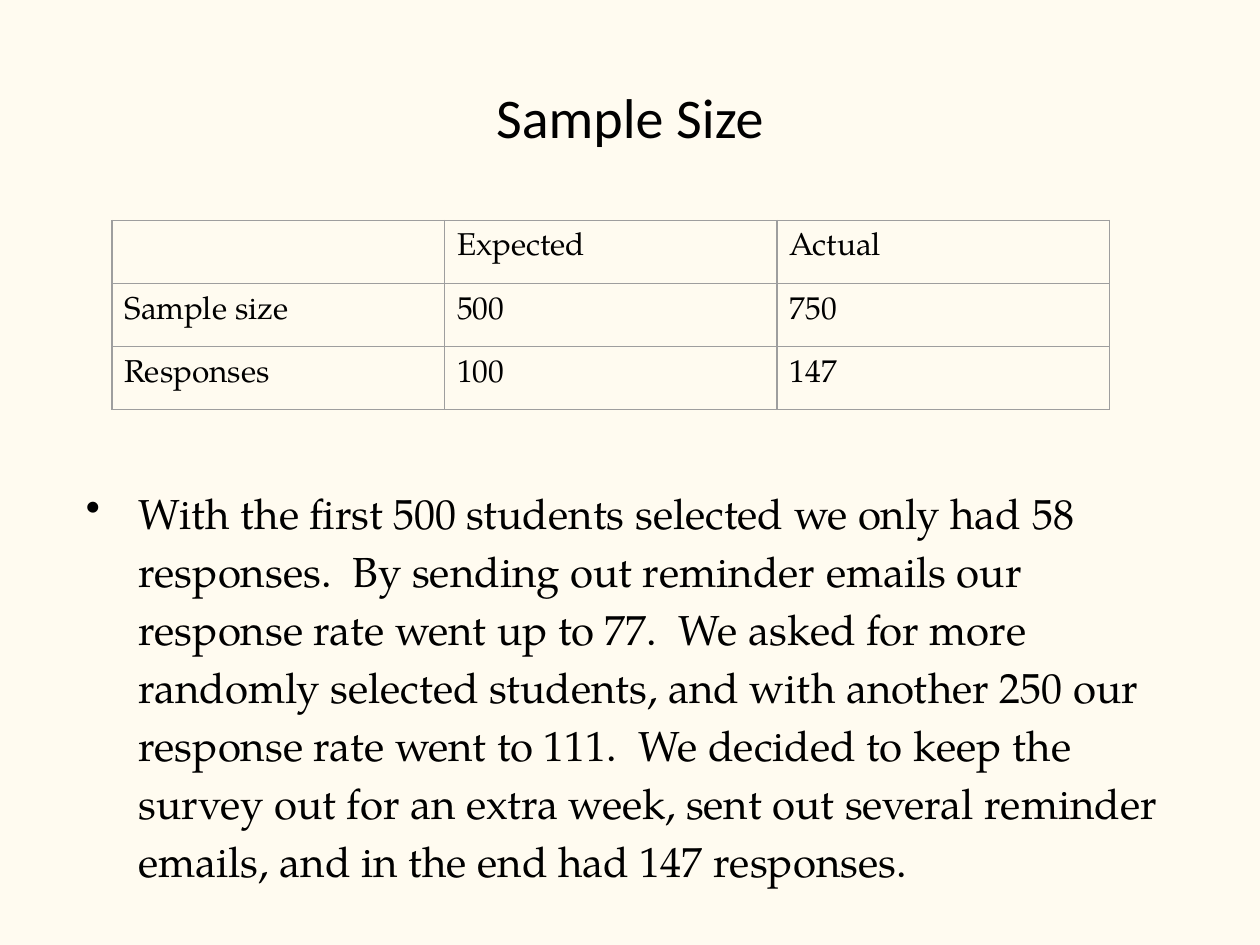
from lxml.etree import SubElement
from pptx import Presentation
from pptx.dml.color import RGBColor
from pptx.enum.text import MSO_ANCHOR as Anchor, PP_ALIGN as Align
from pptx.oxml.ns import qn
from pptx.util import Pt

CREAM = RGBColor(0xFF, 0xFB, 0xF0)
BLACK = RGBColor(0, 0, 0)
GRAY = RGBColor(0x9E, 0x9E, 0x9E)
HEADING_FONT = "Calibri"
BODY_FONT = "TeX Gyre Pagella"
INSET = Pt(7.2)
MARGINS = dict.fromkeys(
    ("margin_left", "margin_right", "margin_top", "margin_bottom"), INSET)

SAMPLE_ROWS = [
    ["", "Expected", "Actual"],
    ["Sample size", "500", "750"],
    ["Responses", "100", "147"],
]
SUMMARY = (
    "With the first 500 students selected we only had 58 responses.  "
    "By sending out reminder emails our response rate went up to 77.  "
    "We asked for more randomly selected students, and with another 250 our "
    "response rate went to 111.  We decided to keep the survey out for an "
    "extra week, sent out several reminder emails, and in the end had 147 "
    "responses."
)


def apply(target, values):
    for name, value in values.items():
        setattr(target, name, value)


class SlideBuilder:
    def __init__(self, page):
        self.page = page

    def background(self, color):
        fill = self.page.background.fill
        fill.solid()
        fill.fore_color.rgb = color

    def add_span(self, para, text, font, size):
        span = para.add_run()
        span.text = text
        apply(span.font, {"name": font, "size": Pt(size)})
        span.font.color.rgb = BLACK

    def text(self, bounds, text, font, size, anchor=Anchor.TOP, **layout):
        box = self.page.shapes.add_textbox(*map(Pt, bounds))
        frame = box.text_frame
        apply(frame, {"word_wrap": True, "vertical_anchor": anchor, **MARGINS})
        para = frame.paragraphs[0]
        apply(para, layout)
        self.add_span(para, text, font, size)
        return para

    def bullet(self, bounds, text, font, size, indent, hanging):
        para = self.text(bounds, text, font, size, line_spacing=1.15)
        props = para._p.get_or_add_pPr()
        props.set("marL", str(Pt(indent)))
        props.set("indent", str(-Pt(hanging)))
        color = SubElement(props, qn("a:buClr"))
        SubElement(color, qn("a:srgbClr"), val=str(BLACK))
        SubElement(props, qn("a:buChar"), char="•")

    def borders(self, cell, color, width):
        props = cell._tc.get_or_add_tcPr()
        for position, side in enumerate(("lnL", "lnR", "lnT", "lnB")):
            line = SubElement(props, qn(f"a:{side}"), w=str(Pt(width)))
            fill = SubElement(line, qn("a:solidFill"))
            SubElement(fill, qn("a:srgbClr"), val=str(color))
            props.insert(position, line)

    def table(self, left, top, column_width, row_height, rows, font, size):
        width, height = column_width * len(rows[0]), row_height * len(rows)
        table = self.page.shapes.add_table(
            len(rows), len(rows[0]), *map(Pt, (left, top, width, height))).table
        apply(table, {"first_row": False, "horz_banding": False})
        for column in table.columns:
            column.width = Pt(column_width)
        for row, values in zip(table.rows, rows):
            row.height = Pt(row_height)
            for cell, value in zip(row.cells, values):
                cell.fill.background()
                self.borders(cell, GRAY, 0.75)
                apply(cell, MARGINS)
                if value:
                    para = cell.text_frame.paragraphs[0]
                    self.add_span(para, value, font, size)


def main():
    deck = Presentation()
    apply(deck, {"slide_width": Pt(720), "slide_height": Pt(540)})
    builder = SlideBuilder(deck.slides.add_slide(deck.slide_layouts[6]))
    builder.background(CREAM)
    builder.text((36, 21.6, 648, 90), "Sample Size", HEADING_FONT, 32,
                 anchor=Anchor.MIDDLE, alignment=Align.CENTER)
    builder.bullet((36, 267, 648, 250), SUMMARY, BODY_FONT, 24,
                   indent=36, hanging=30)
    builder.table(64, 126, 190, 30.24, SAMPLE_ROWS, BODY_FONT, 18)
    deck.save("out.pptx")


if __name__ == "__main__":
    main()
